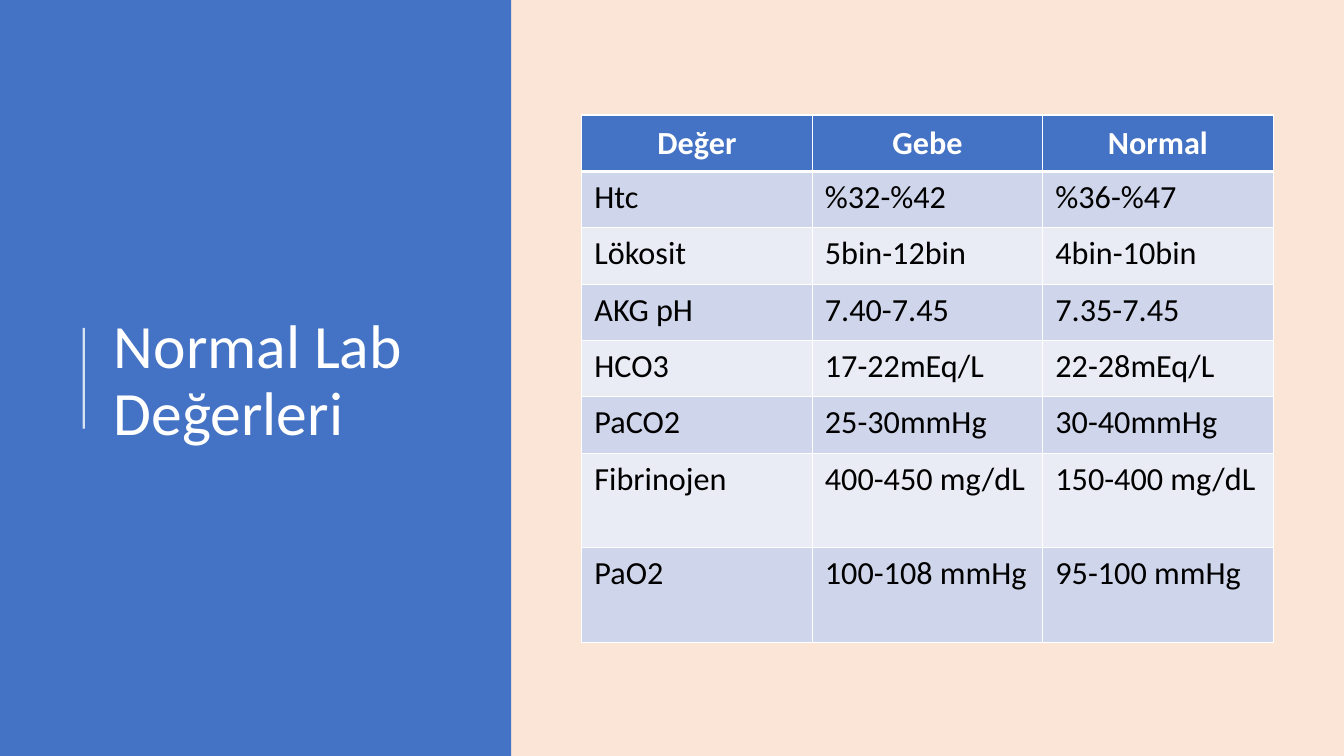
"""Builds a slide with a table of normal lab values."""
from lxml import etree
from pptx import Presentation
from pptx.dml.color import RGBColor
from pptx.enum.shapes import MSO_CONNECTOR, MSO_SHAPE
from pptx.enum.text import MSO_ANCHOR, PP_ALIGN
from pptx.oxml import parse_xml
from pptx.oxml.ns import nsdecls, qn
from pptx.util import Cm, Pt

RECT = MSO_SHAPE.RECTANGLE
LINE = MSO_CONNECTOR.STRAIGHT
MIDDLE = MSO_ANCHOR.MIDDLE
TOP = MSO_ANCHOR.TOP
CENTER = PP_ALIGN.CENTER
LEFT = PP_ALIGN.LEFT

PEACH = RGBColor(0xFB, 0xE5, 0xD6)
BLUE = RGBColor(0x44, 0x72, 0xC4)
WHITE = RGBColor(0xFF, 0xFF, 0xFF)
BLACK = RGBColor(0, 0, 0)
BANDS = [RGBColor(0xE9, 0xEB, 0xF5), RGBColor(0xCF, 0xD5, 0xEA)]
FONT = "Calibri"

ROWS = [
    ("Değer", "Gebe", "Normal"),
    ("Htc", "%32-%42", "%36-%47"),
    ("Lökosit", "5bin-12bin", "4bin-10bin"),
    ("AKG pH", "7.40-7.45", "7.35-7.45"),
    ("HCO3", "17-22mEq/L", "22-28mEq/L"),
    ("PaCO2", "25-30mmHg", "30-40mmHg"),
    ("Fibrinojen", "400-450 mg/dL", "150-400 mg/dL"),
    ("PaO2", "100-108 mmHg", "95-100 mmHg"),
]


def style(para, size, color, bold=False):
    font = para.runs[0].font
    font.name = FONT
    font.size = Pt(size)
    font.bold = bold
    font.color.rgb = color


def border(cell, side, width):
    cell._tc.get_or_add_tcPr().append(parse_xml(
        f'<a:ln{side} {nsdecls("a")} w="{Pt(width)}"><a:solidFill>'
        f'<a:srgbClr val="{WHITE}"/></a:solidFill></a:ln{side}>'))


prs = Presentation()
prs.slide_width = Cm(33.87)
prs.slide_height = Cm(19.05)
slide = prs.slides.add_slide(prs.slide_layouts[6])
slide.background.fill.solid()
slide.background.fill.fore_color.rgb = PEACH

panel = slide.shapes.add_shape(RECT, 0, 0, Cm(12.88), prs.slide_height)
panel.shadow.inherit = False
panel.fill.solid()
panel.fill.fore_color.rgb = BLUE
panel.line.fill.background()

rule = slide.shapes.add_connector(LINE, Cm(2.11), Cm(10.8), Cm(2.11), Cm(8.26))
rule.line.color.rgb = WHITE
rule.line.width = Pt(1.5)
props = rule._element.spPr
etree.SubElement(props.find(".//" + qn("a:srgbClr")), qn("a:alpha"), val="80000")
etree.SubElement(props, qn("a:effectLst"))

title = slide.shapes.add_textbox(Cm(2.62), Cm(1.98), Cm(9.37), Cm(15.29))
frame = title.text_frame
frame.word_wrap = True
frame.vertical_anchor = MIDDLE
frame.text = "Normal Lab Değerleri"
frame.paragraphs[0].line_spacing = 0.9
style(frame.paragraphs[0], 44, WHITE)

table = slide.shapes.add_table(
    len(ROWS), 3, Cm(14.66), Cm(2.9), Cm(17.43), Cm(13.28)).table
for col in table.columns:
    col.width = Cm(5.81)
for i, texts in enumerate(ROWS):
    head = i == 0
    table.rows[i].height = Cm(1.42 if i < 6 else 2.38)
    for j, text in enumerate(texts):
        cell = table.cell(i, j)
        cell.margin_left = cell.margin_right = Cm(0.32)
        cell.margin_top = cell.margin_bottom = Cm(0.16)
        cell.vertical_anchor = MIDDLE if head else TOP
        border(cell, "L", 1)
        border(cell, "R", 1)
        border(cell, "T", 3 if i == 1 else 1)
        border(cell, "B", 3 if head else 1)
        cell.fill.solid()
        cell.fill.fore_color.rgb = BLUE if head else BANDS[i % 2]
        cell.text_frame.text = text
        para = cell.text_frame.paragraphs[0]
        para.alignment = CENTER if head else LEFT
        style(para, 23, WHITE if head else BLACK, head)

prs.save("out.pptx")
